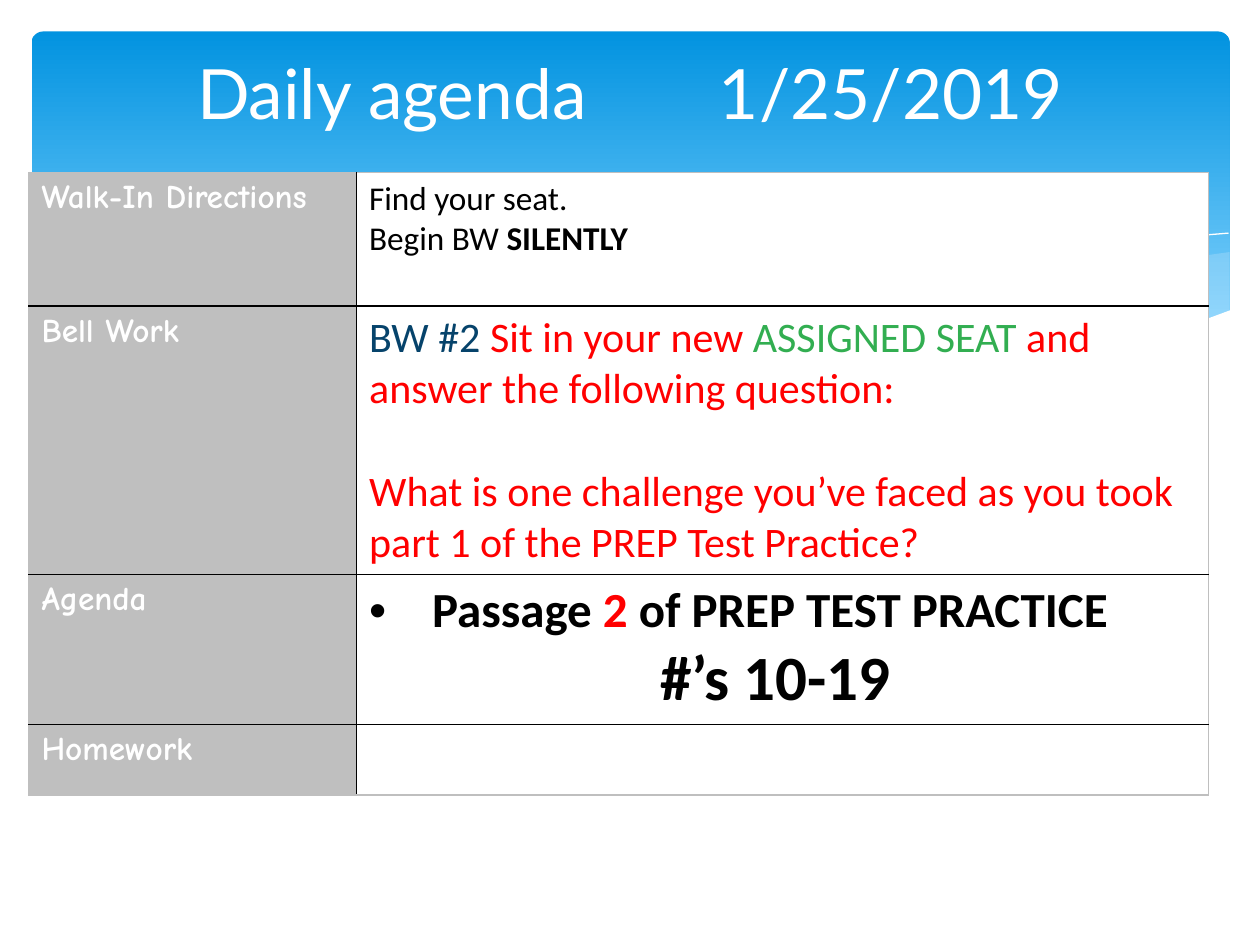
"""Build the daily agenda slide: blue wave banner, title and agenda table."""
import pptx
import pptx.dml.color
import pptx.enum.shapes
import pptx.enum.text
import pptx.oxml
import pptx.oxml.ns
import pptx.util
from pptx.util import Inches, Pt

RGBColor = pptx.dml.color.RGBColor
ALIGN = pptx.enum.text.PP_ALIGN
WHITE = RGBColor(0xFF, 0xFF, 0xFF)
BLACK = RGBColor(0, 0, 0)
GRAY = RGBColor(0xBF, 0xBF, 0xBF)
RED = RGBColor(0xFF, 0, 0)
GREEN = RGBColor(0x32, 0xAE, 0x51)
NAVY = RGBColor(0x06, 0x43, 0x6B)
SKY_TOP = RGBColor(0x02, 0x93, 0xE0)
SKY_BOTTOM = RGBColor(0x83, 0xD3, 0xFE)
PALE_BLUE = RGBColor(0xC6, 0xE7, 0xFC)

RIGHT_WAVE = [
    (9.76, 2), (9.48, 2.04), (9.06, 2.13), (8.61, 2.23), (8.05, 2.37), (7.53, 2.48),
    (7.06, 2.57), (6.61, 2.65), (7.05, 2.71), (7.45, 2.75), (7.81, 2.77), (8.14, 2.78),
    (8.54, 2.76), (8.89, 2.72), (9.21, 2.65), (9.49, 2.57), (9.76, 2.47)]
MIDDLE_WAVE = [
    (8.93, 2.73), (8.37, 2.65), (7.75, 2.54), (7.06, 2.4), (6.29, 2.22), (5.84, 2.11),
    (5.41, 2.03), (5.02, 1.96), (4.65, 1.91), (4.2, 1.87), (3.8, 1.85), (3.44, 1.86),
    (3.13, 1.88), (2.86, 1.91), (3.42, 1.99), (4.04, 2.11), (4.49, 2.22), (5.3, 2.4),
    (6.01, 2.55), (6.5, 2.64), (6.95, 2.7), (7.36, 2.75), (7.85, 2.78), (8.38, 2.78)]
LONG_CREST = [
    (3.09, 1.95), (3.44, 1.9), (3.87, 1.87), (4.33, 1.87), (4.89, 1.9), (5.56, 1.97),
    (6.08, 2.04), (6.65, 2.13), (7.27, 2.26), (7.95, 2.41), (8.69, 2.61), (9.07, 2.72)]
SHORT_CREST = [
    (6.13, 2.57), (6.53, 2.46), (6.95, 2.35), (7.48, 2.23), (8.06, 2.1), (8.66, 1.99),
    (9.1, 1.92), (9.51, 1.87), (9.75, 1.85)]
WHITE_WAVE = [
    (9.77, 2.46), (9.5, 2.56), (9.2, 2.65), (8.87, 2.71), (8.5, 2.75), (8.09, 2.77),
    (7.61, 2.75), (7.08, 2.7), (6.48, 2.62), (5.79, 2.5), (5.03, 2.33), (4.47, 2.2),
    (3.91, 2.07), (3.4, 1.97), (2.92, 1.9), (2.5, 1.86), (2.11, 1.84), (1.77, 1.84),
    (1.32, 1.86), (0.95, 1.91), (0.59, 1.99), (0.36, 2.07), (0.23, 2.13),
    (0.23, 3.29), (9.77, 3.29)]

COLUMN_WIDTHS = [2.6, 6.76]
ROW_HEIGHTS = [1.06, 2.13, 1.19, 0.56]
ROW_LABELS = ["Walk-In Directions", "Bell Work", "Agenda", "Homework"]


def add_banner(slide):
    """Add the rounded banner with its vertical gradient."""
    banner = slide.shapes.add_shape(
        pptx.enum.shapes.MSO_SHAPE.ROUNDED_RECTANGLE,
        Inches(0.25), Inches(0.25), Inches(9.51), Inches(2.7))
    banner.adjustments[0] = 0.034
    banner.shadow.inherit = False
    banner.line.fill.background()
    banner.fill.gradient()
    banner.fill.gradient_angle = 270
    stops = banner.fill.gradient_stops
    for stop, color, position in zip(stops, (SKY_TOP, SKY_BOTTOM), (0, 0.9)):
        stop.color.rgb = color
        stop.position = position


def trace(slide, points, closed):
    """Return an unshadowed freeform through points given in inches."""
    start, *rest = [(Inches(x), Inches(y)) for x, y in points]
    builder = slide.shapes.build_freeform(*start, scale=1.0)
    builder.add_line_segments(rest, close=closed)
    outline = builder.convert_to_shape()
    outline.shadow.inherit = False
    return outline


def make_element(markup):
    """Parse one DrawingML element such as 'alpha val="1"'."""
    return pptx.oxml.parse_xml(f'<a:{markup} {pptx.oxml.ns.nsdecls("a")}/>')


def add_wave(slide, points, color, opacity=100):
    """Add a filled wave with the given opacity in percent."""
    wave = trace(slide, points, True)
    wave.line.fill.background()
    wave.fill.solid()
    wave.fill.fore_color.rgb = color
    if opacity < 100:
        tint = wave.fill._xPr.find(".//" + pptx.oxml.ns.qn("a:srgbClr"))
        tint.append(make_element(f'alpha val="{opacity * 1000}"'))


def add_crest(slide, points):
    """Add a white hairline along a wave."""
    crest = trace(slide, points, False)
    crest.fill.background()
    crest.line.color.rgb = WHITE
    crest.line.width = Pt(0)


def add_run(paragraph, text, size, color, font="Calibri", bold=False):
    """Append one formatted run."""
    run = paragraph.add_run()
    run.text = text
    run.font.size = Pt(size)
    run.font.name = font
    run.font.bold = bold
    run.font.color.rgb = color


def add_title(slide):
    """Add the title with its date at a tab stop."""
    title = slide.shapes.add_textbox(Inches(0.5), Inches(0.37), Inches(9), Inches(1.37))
    frame = title.text_frame
    frame.word_wrap = True
    frame.margin_top = Inches(0.03)
    frame.vertical_anchor = pptx.enum.text.MSO_ANCHOR.TOP
    heading = frame.paragraphs[0]
    heading.alignment = ALIGN.CENTER
    tabs = make_element("tabLst")
    tabs.append(make_element(f'tab pos="{Inches(4)}" algn="l"'))
    heading._p.get_or_add_pPr().append(tabs)
    add_run(heading, "Daily agenda\t 1/25/2019", 39.6, WHITE, "Lato")


def style_cell(cell, fill, borders):
    """Set the borders (side to colour) and then the fill of a cell."""
    properties = cell._tc.get_or_add_tcPr()
    for side, color in borders.items():
        properties.append(pptx.oxml.parse_xml(
            f'<a:ln{side} {pptx.oxml.ns.nsdecls("a")} w="{Pt(1)}"><a:solidFill>'
            f'<a:srgbClr val="{color}"/></a:solidFill></a:ln{side}>'))
    cell.fill.solid()
    cell.fill.fore_color.rgb = fill


def add_bullet(paragraph):
    """Give a paragraph a bullet with a half-inch hanging indent."""
    properties = paragraph._p.get_or_add_pPr()
    properties.set("marL", str(Inches(0.5)))
    properties.set("indent", str(-Inches(0.5)))
    properties.append(make_element('buFont typeface="Arial"'))
    properties.append(make_element('buChar char="•"'))


def fill_directions(frame):
    """Write the walk-in directions."""
    add_run(frame.paragraphs[0], "Find your seat.", 19, BLACK)
    begin = frame.add_paragraph()
    add_run(begin, "Begin BW ", 19, BLACK)
    add_run(begin, "SILENTLY", 19, BLACK, bold=True)


def fill_bell_work(frame):
    """Write the bell work task and its question."""
    task = frame.paragraphs[0]
    for text, color in (("BW #2 ", NAVY), ("Sit in your new ", RED),
                        ("ASSIGNED SEAT ", GREEN),
                        ("and answer the following question:", RED)):
        add_run(task, text, 24, color)
    question = frame.add_paragraph()
    question.space_before = Pt(29.3)
    add_run(question, "What is one challenge you’ve faced as you took "
                      "part 1 of the PREP Test Practice?", 24, RED)


def fill_agenda(frame):
    """Write the agenda passage and its question numbers."""
    passage = frame.paragraphs[0]
    add_bullet(passage)
    for text, color in (("Passage ", BLACK), ("2", RED), (" of PREP TEST PRACTICE", BLACK)):
        add_run(passage, text, 28, color, bold=True)
    numbers = frame.add_paragraph()
    numbers.alignment = ALIGN.CENTER
    add_run(numbers, "#’s 10-19 ", 36, BLACK, bold=True)


def add_agenda_table(slide):
    """Add the table of labels and details."""
    agenda = slide.shapes.add_table(
        len(ROW_HEIGHTS), len(COLUMN_WIDTHS), Inches(0.23), Inches(1.37),
        Inches(sum(COLUMN_WIDTHS)), Inches(sum(ROW_HEIGHTS))).table
    for column, width in zip(agenda.columns, COLUMN_WIDTHS):
        column.width = Inches(width)
    last = len(ROW_HEIGHTS) - 1
    for index, (height, label) in enumerate(zip(ROW_HEIGHTS, ROW_LABELS)):
        agenda.rows[index].height = Inches(height)
        top = BLACK if index else GRAY
        bottom = BLACK if index < last else GRAY
        label_cell, detail_cell = agenda.cell(index, 0), agenda.cell(index, 1)
        style_cell(label_cell, GRAY, {"L": GRAY, "R": BLACK, "T": top, "B": bottom})
        style_cell(detail_cell, WHITE, {"L": BLACK, "R": GRAY, "T": top, "B": bottom})
        add_run(label_cell.text_frame.paragraphs[0], label, 19, WHITE, "Comic Neue", True)
    for index, write in enumerate((fill_directions, fill_bell_work, fill_agenda)):
        write(agenda.cell(index, 1).text_frame)


def main():
    """Build and save the slide."""
    deck = pptx.Presentation()
    deck.slide_width, deck.slide_height = Inches(10), Inches(7.5)
    slide = deck.slides.add_slide(deck.slide_layouts[6])
    add_banner(slide)
    add_wave(slide, RIGHT_WAVE, PALE_BLUE, 29)
    add_wave(slide, MIDDLE_WAVE, PALE_BLUE, 40)
    add_crest(slide, LONG_CREST)
    add_crest(slide, SHORT_CREST)
    add_wave(slide, WHITE_WAVE, WHITE)
    add_title(slide)
    add_agenda_table(slide)
    deck.save("out.pptx")


if __name__ == "__main__":
    main()
